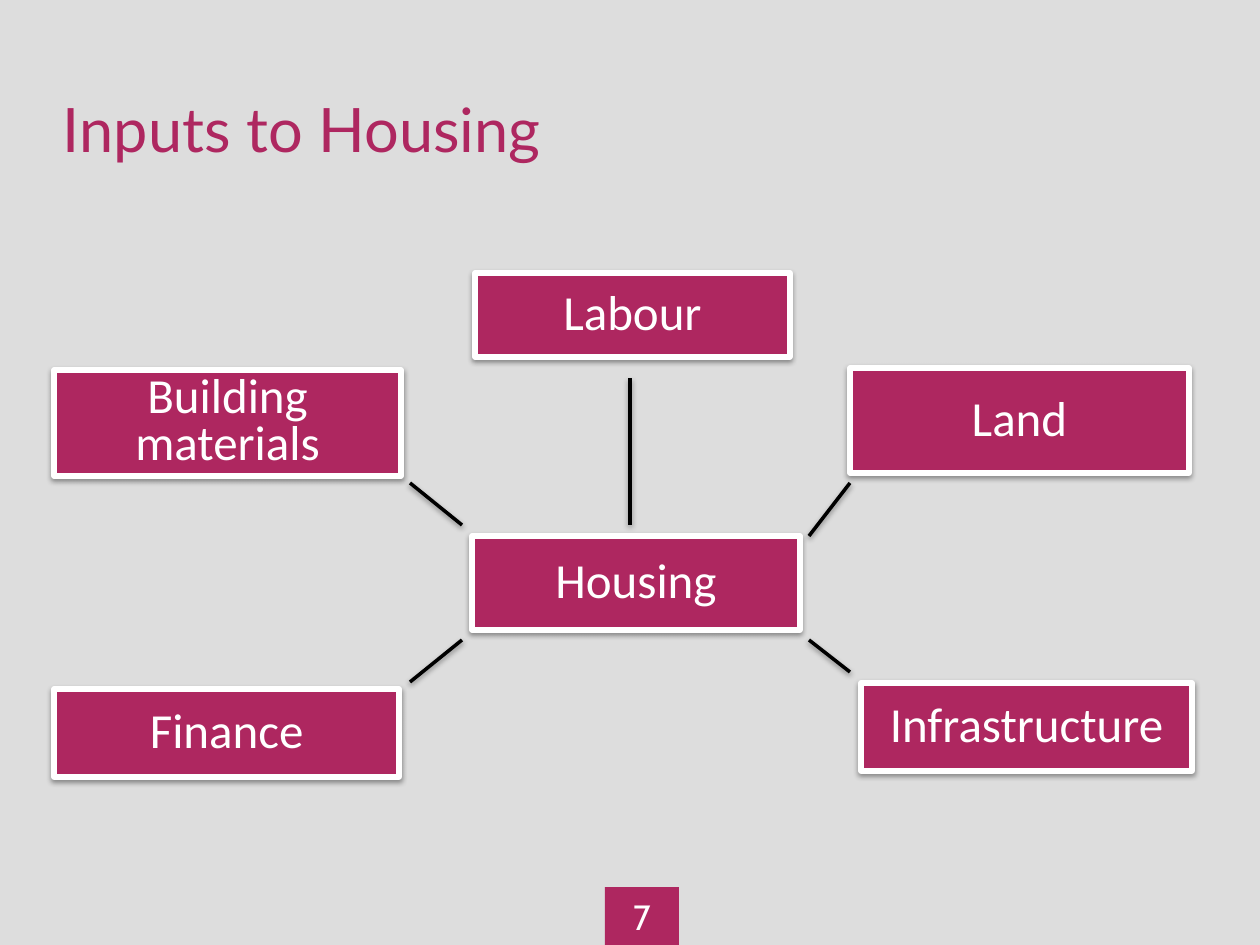
"""Build the slide "Inputs to Housing": five inputs linked to a central box."""
from lxml import etree
from pptx import Presentation
from pptx.dml.color import RGBColor
from pptx.enum.shapes import MSO_CONNECTOR, MSO_SHAPE
from pptx.enum.text import MSO_ANCHOR, PP_ALIGN
from pptx.oxml import parse_xml
from pptx.oxml.ns import nsdecls, qn
from pptx.util import Pt

PX = 914400 / 126
RECT = MSO_SHAPE.RECTANGLE
STRAIGHT = MSO_CONNECTOR.STRAIGHT
LEFT, CENTER = PP_ALIGN.LEFT, PP_ALIGN.CENTER
MIDDLE, BOTTOM = MSO_ANCHOR.MIDDLE, MSO_ANCHOR.BOTTOM
COLORS = {
    name: RGBColor.from_string(value)
    for name, value in {
        "back": "DDDDDD", "berry": "AE2760", "white": "FFFFFF", "black": "000000",
    }.items()
}
SHADOW = (
    f'<a:outerShdw {nsdecls("a")} blurRad="{Pt(3.1)}" dist="{Pt(1.6)}" dir="5400000" '
    'rotWithShape="0"><a:srgbClr val="000000"><a:alpha val="38000"/></a:srgbClr>'
    '</a:outerShdw>'
)


def write(sp, text, size, font, color, align, anchor, inset):
    tf = sp.text_frame
    tf.word_wrap = True
    tf.vertical_anchor = anchor
    tf.margin_left = tf.margin_right = tf.margin_top = tf.margin_bottom = int(inset * PX)
    p = tf.paragraphs[0]
    p.alignment = align
    r = p.add_run()
    r.text = text
    r.font.size = Pt(size)
    r.font.name = font
    r.font.color.rgb = COLORS[color]
    return p


def add_shadow(sp):
    props = sp._element.spPr
    effects = props.find(qn("a:effectLst"))
    if effects is None:
        effects = etree.SubElement(props, qn("a:effectLst"))
    effects.append(parse_xml(SHADOW))


prs = Presentation()
prs.slide_width, prs.slide_height = int(1260 * PX), int(945 * PX)
s = prs.slides.add_slide(prs.slide_layouts[6])
s.background.fill.solid()
s.background.fill.fore_color.rgb = COLORS["back"]

title = s.shapes.add_textbox(*[int(v * PX) for v in (63, 84, 1134, 81)])
write(title, "Inputs to Housing", 35, "Lato", "berry", LEFT, BOTTOM, 0)

number = s.shapes.add_shape(RECT, *[int(v * PX) for v in (605, 887, 74, 59)])
number.shadow.inherit = False
number.fill.solid()
number.fill.fore_color.rgb = COLORS["berry"]
number.line.fill.background()
write(number, "7", 20, "Cabin", "white", CENTER, MIDDLE, 6)

boxes = [
    ("Housing", 472, 536, 328, 94, 0.9),
    ("Labour", 475, 273, 315, 84, 0.9),
    ("Land", 850, 368, 339, 105, 0.9),
    ("Infrastructure", 861, 683, 331, 88, 0.9),
    ("Finance", 54, 689, 345, 88, 0.9),
    ("Building materials", 54, 370, 347, 106, 0.8),
]
for text, *box, spacing in boxes:
    sp = s.shapes.add_shape(RECT, *[int(v * PX) for v in box])
    sp.shadow.inherit = False
    sp.fill.solid()
    sp.fill.fore_color.rgb = COLORS["berry"]
    sp.line.color.rgb = COLORS["white"]
    sp.line.width = Pt(3)
    add_shadow(sp)
    p = write(sp, text, 28, "Calibri", "white", CENTER, MIDDLE, 2)
    p.line_spacing = spacing

links = [
    (630, 378, 630, 525),
    (850, 483, 809, 536),
    (410, 483, 462, 525),
    (462, 640, 410, 682),
    (809, 640, 850, 672),
]
for ends in links:
    link = s.shapes.add_connector(STRAIGHT, *[int(v * PX) for v in ends])
    link.line.color.rgb = COLORS["black"]
    link.line.width = Pt(2)
    add_shadow(link)

prs.save("out.pptx")
